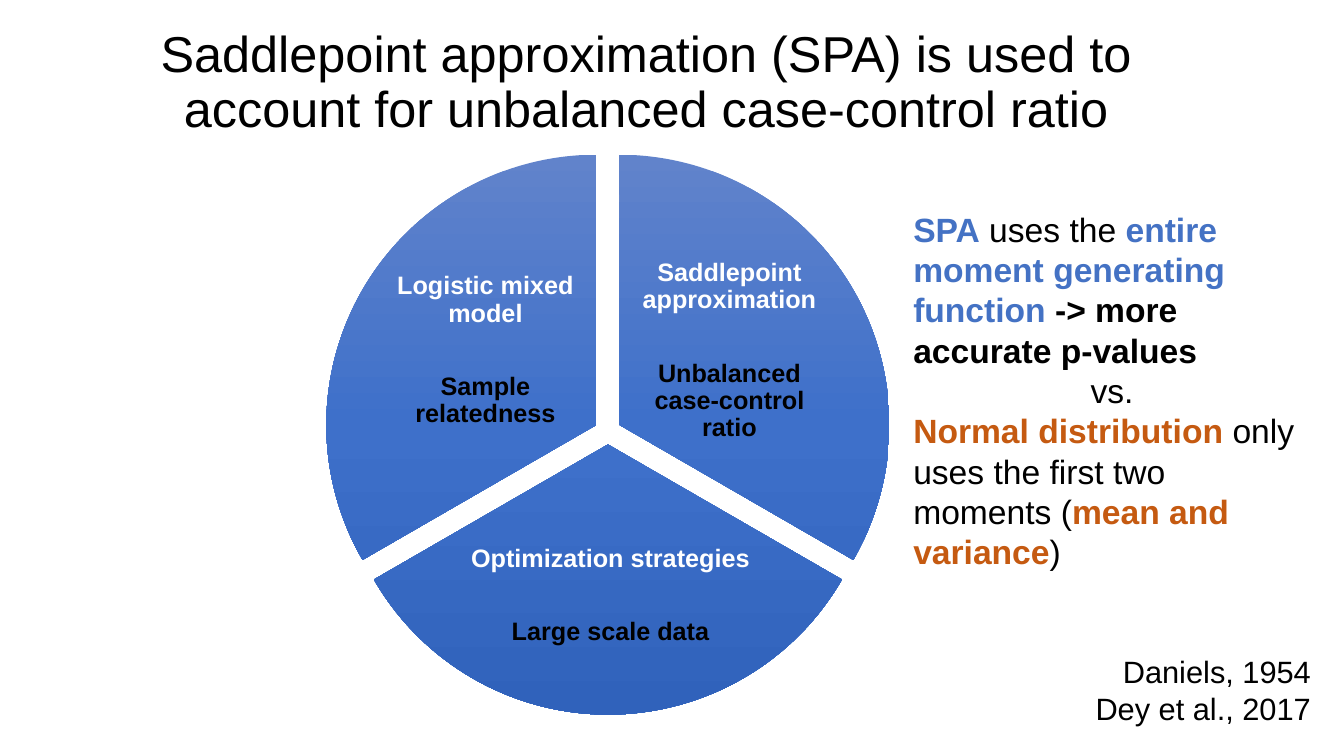
from copy import deepcopy
from dataclasses import dataclass
from math import cos, radians, sin

from pptx import Presentation
from pptx.dml.color import RGBColor
from pptx.enum.shapes import MSO_SHAPE
from pptx.enum.text import MSO_ANCHOR, MSO_AUTO_SIZE, PP_ALIGN
from pptx.oxml.ns import qn
from pptx.util import Inches, Pt


@dataclass(frozen=True)
class Theme:
    font: str = "Arial"
    black: str = "000000"
    white: str = "FFFFFF"
    blue: str = "4472C4"
    orange: str = "C55A11"
    slice_gradient: tuple = ("6183CB", "3E70CA", "3062BB")
    title_size: int = 36
    body_size: int = 24
    citation_size: int = 22
    label_size: int = 18


THEME = Theme()
PIE_CENTER = (6.03, 4.28)
PIE_DIAMETER = 5.36
SLICE_OFFSET = 0.13
SLICE_ANGLE = 120
FIRST_ANGLE = 270

SLICES = [
    ("Saddlepoint approximation", "Unbalanced case-control ratio", (6.28, 2.68, 1.91, 1.6)),
    ("Optimization strategies", "Large scale data", (4.62, 5.21, 2.87, 1.4)),
    ("Logistic mixed model", "Sample relatedness", (3.86, 2.68, 1.91, 1.6)),
]


def add_run(paragraph, text, size, color=THEME.black, bold=False):
    run = paragraph.add_run()
    run.text = text
    run.font.name = THEME.font
    run.font.size = Pt(size)
    run.font.bold = bold
    run.font.color.rgb = RGBColor.from_string(color)


def add_paragraph(frame, runs, size, alignment=PP_ALIGN.LEFT, before=0, spacing=1.0):
    paragraph = frame.paragraphs[0]
    if paragraph.runs:
        paragraph = frame.add_paragraph()
    paragraph.alignment = alignment
    paragraph.space_before = Pt(before)
    paragraph.line_spacing = spacing
    for text, color, bold in runs:
        add_run(paragraph, text, size, color, bold)


def add_text_box(shapes, box):
    frame = shapes.add_textbox(*map(Inches, box)).text_frame
    frame.word_wrap = True
    return frame


def set_title(slide, text):
    title = slide.shapes.title
    title.left, title.top, title.width, title.height = map(Inches, (0.57, 0, 11.68, 1.66))
    frame = title.text_frame
    frame.word_wrap = True
    frame.auto_size = MSO_AUTO_SIZE.NONE
    frame.vertical_anchor = MSO_ANCHOR.MIDDLE
    add_paragraph(frame, [(text, THEME.black, False)], THEME.title_size,
                  PP_ALIGN.CENTER, spacing=0.9)


def fill_gradient(shape, colors):
    shape.fill.gradient()
    shape.fill.gradient_angle = 270
    stop_list = shape.fill._xPr.find(qn("a:gradFill")).find(qn("a:gsLst"))
    stop_list.insert(1, deepcopy(stop_list[0]))
    for index, (stop, color) in enumerate(zip(shape.fill.gradient_stops, colors)):
        stop.position = index / (len(colors) - 1)
        stop.color.rgb = RGBColor.from_string(color)


def add_slice(shapes, index):
    start = FIRST_ANGLE + index * SLICE_ANGLE
    middle = radians(start + SLICE_ANGLE / 2)
    left = PIE_CENTER[0] + SLICE_OFFSET * cos(middle) - PIE_DIAMETER / 2
    top = PIE_CENTER[1] + SLICE_OFFSET * sin(middle) - PIE_DIAMETER / 2
    shape = shapes.add_shape(MSO_SHAPE.PIE, Inches(left), Inches(top),
                             Inches(PIE_DIAMETER), Inches(PIE_DIAMETER))
    shape.shadow.inherit = False
    shape.line.fill.background()
    for position, angle in enumerate((start, start + SLICE_ANGLE)):
        shape.adjustments[position] = angle % 360 * 0.6
    fill_gradient(shape, THEME.slice_gradient)


def add_slice_label(shapes, method, challenge, box):
    frame = add_text_box(shapes, box)
    frame.vertical_anchor = MSO_ANCHOR.MIDDLE
    frame.margin_left = frame.margin_right = Inches(0.03)
    frame.margin_top = frame.margin_bottom = Inches(0.03)
    for text, color, before in ((method, THEME.white, 0), (challenge, THEME.black, 33)):
        add_paragraph(frame, [(text, color, True)], THEME.label_size,
                      PP_ALIGN.CENTER, before, 0.9)


def add_pie(slide):
    shapes = slide.shapes.add_group_shape().shapes
    for index, (method, challenge, box) in enumerate(SLICES):
        add_slice(shapes, index)
        add_slice_label(shapes, method, challenge, box)


def add_comparison(slide):
    frame = add_text_box(slide.shapes, (8.96, 2.02, 4.14, 5.35))
    frame.auto_size = MSO_AUTO_SIZE.SHAPE_TO_FIT_TEXT
    add_paragraph(frame, [
        ("SPA", THEME.blue, True),
        (" uses the ", THEME.black, False),
        ("entire moment generating function ", THEME.blue, True),
        ("-> more accurate p-values", THEME.black, True),
    ], THEME.body_size)
    add_paragraph(frame, [("vs.", THEME.black, False)], THEME.body_size, PP_ALIGN.CENTER)
    add_paragraph(frame, [
        ("Normal distribution ", THEME.orange, True),
        ("only uses the first two moments (", THEME.black, False),
        ("mean and variance", THEME.orange, True),
        (")", THEME.black, False),
    ], THEME.body_size)
    for citation, before in (("Daniels, 1954", 58), ("Dey et al., 2017", 0)):
        add_paragraph(frame, [(citation, THEME.black, False)], THEME.citation_size,
                      PP_ALIGN.RIGHT, before)


def main():
    presentation = Presentation()
    presentation.slide_width = Inches(13.33)
    presentation.slide_height = Inches(7.5)
    slide = presentation.slides.add_slide(presentation.slide_layouts[5])
    set_title(slide, "Saddlepoint approximation (SPA) is used to "
                     "account for unbalanced case-control ratio")
    add_pie(slide)
    add_comparison(slide)
    presentation.save("out.pptx")


if __name__ == "__main__":
    main()
